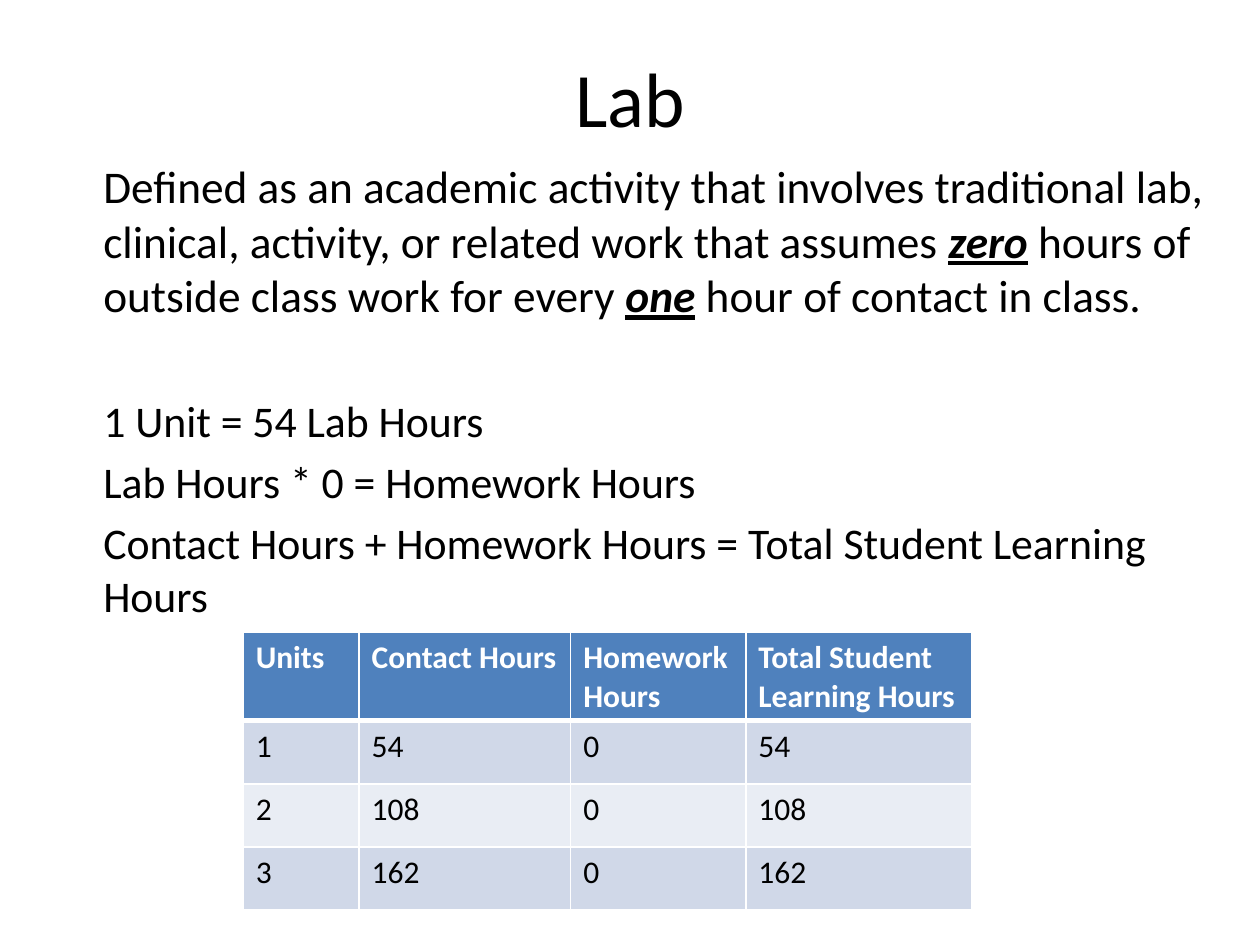
from lxml import etree
from pptx import Presentation
from pptx import util as u
from pptx.dml import color
from pptx.enum import text
from pptx.oxml import ns

Inches, Pt = u.Inches, u.Pt
FONT = "Calibri"
COLORS = {
    "text": "000000",
    "white": "FFFFFF",
    "header": "4F81BD",
    "odd": "D0D8E8",
    "even": "E9EDF4",
}
DEFINITION = [
    ("Defined as an academic activity that involves traditional lab, clinical, "
     "activity, or related work that assumes ", False),
    ("zero", True),
    (" hours of outside class work for every ", False),
    ("one", True),
    (" hour of contact in class.", False),
]
FORMULAS = [
    "1 Unit = 54 Lab Hours",
    "Lab Hours * 0 = Homework Hours",
    "Contact Hours + Homework Hours = Total Student Learning Hours",
]
HEADINGS = ["Units", "Contact Hours", "Homework Hours", "Total Student Learning Hours"]
HOURS_PER_UNIT = 54
COLUMN_WIDTHS = [0.92, 1.68, 1.39, 1.79]
ROW_HEIGHTS = [0.7, 0.5, 0.5, 0.5]


def rgb(name):
    return color.RGBColor.from_string(COLORS[name])


def add_run(paragraph, words, size, shade="text", bold=False):
    run = paragraph.add_run()
    run.text = words
    run.font.name = FONT
    run.font.size = Pt(size)
    run.font.bold = bold
    run.font.color.rgb = rgb(shade)
    return run


def add_frame(slide, left, top, width, height):
    box = slide.shapes.add_textbox(Inches(left), Inches(top), Inches(width), Inches(height))
    box.text_frame.word_wrap = True
    return box.text_frame


def add_title(slide, left, top, width, height):
    frame = add_frame(slide, left, top, width, height)
    frame.vertical_anchor = text.MSO_ANCHOR.MIDDLE
    paragraph = frame.paragraphs[0]
    paragraph.alignment = text.PP_ALIGN.CENTER
    add_run(paragraph, "Lab", 44)


def add_body(slide, left, top, width, height):
    frame = add_frame(slide, left, top, width, height)
    frame.margin_left = Inches(0.6)
    for words, stressed in DEFINITION:
        run = add_run(frame.paragraphs[0], words, 25.9, bold=stressed)
        run.font.italic = stressed
        run.font.underline = stressed
    for index, formula in enumerate(FORMULAS):
        paragraph = frame.add_paragraph()
        paragraph.space_before = Pt(5 if index else 41)
        add_run(paragraph, formula, 25)


def add_borders(cell, top, bottom):
    properties = cell._tc.get_or_add_tcPr()
    for side, width in (("L", 1), ("R", 1), ("T", top), ("B", bottom)):
        line = etree.SubElement(properties, ns.qn(f"a:ln{side}"), w=str(Pt(width)))
        fill = etree.SubElement(line, ns.qn("a:solidFill"))
        etree.SubElement(fill, ns.qn("a:srgbClr"), val=COLORS["white"])


def add_hours_table(slide, left, top):
    rows = [HEADINGS]
    for units in range(1, 4):
        hours = units * HOURS_PER_UNIT
        rows.append([units, hours, 0, hours])
    table = slide.shapes.add_table(
        len(rows), len(HEADINGS), Inches(left), Inches(top),
        Inches(sum(COLUMN_WIDTHS)), Inches(sum(ROW_HEIGHTS))).table
    for column, width in zip(table.columns, COLUMN_WIDTHS):
        column.width = Inches(width)
    for row, height in zip(table.rows, ROW_HEIGHTS):
        row.height = Inches(height)
    for row_index, values in enumerate(rows):
        is_header = row_index == 0
        shade = "header" if is_header else "odd" if row_index % 2 else "even"
        for column_index, value in enumerate(values):
            cell = table.cell(row_index, column_index)
            add_borders(cell, 3 if row_index == 1 else 1, 3 if is_header else 1)
            cell.fill.solid()
            cell.fill.fore_color.rgb = rgb(shade)
            add_run(cell.text_frame.paragraphs[0], str(value), 18,
                    "white" if is_header else "text", is_header)


def main():
    presentation = Presentation()
    presentation.slide_width = Inches(10)
    presentation.slide_height = Inches(7.5)
    slide = presentation.slides.add_slide(presentation.slide_layouts[6])
    add_title(slide, 0.5, 0.14, 9, 1.25)
    add_body(slide, 0.22, 1.21, 9.54, 3.49)
    add_hours_table(slide, 1.93, 5.02)
    presentation.save("out.pptx")


if __name__ == "__main__":
    main()
